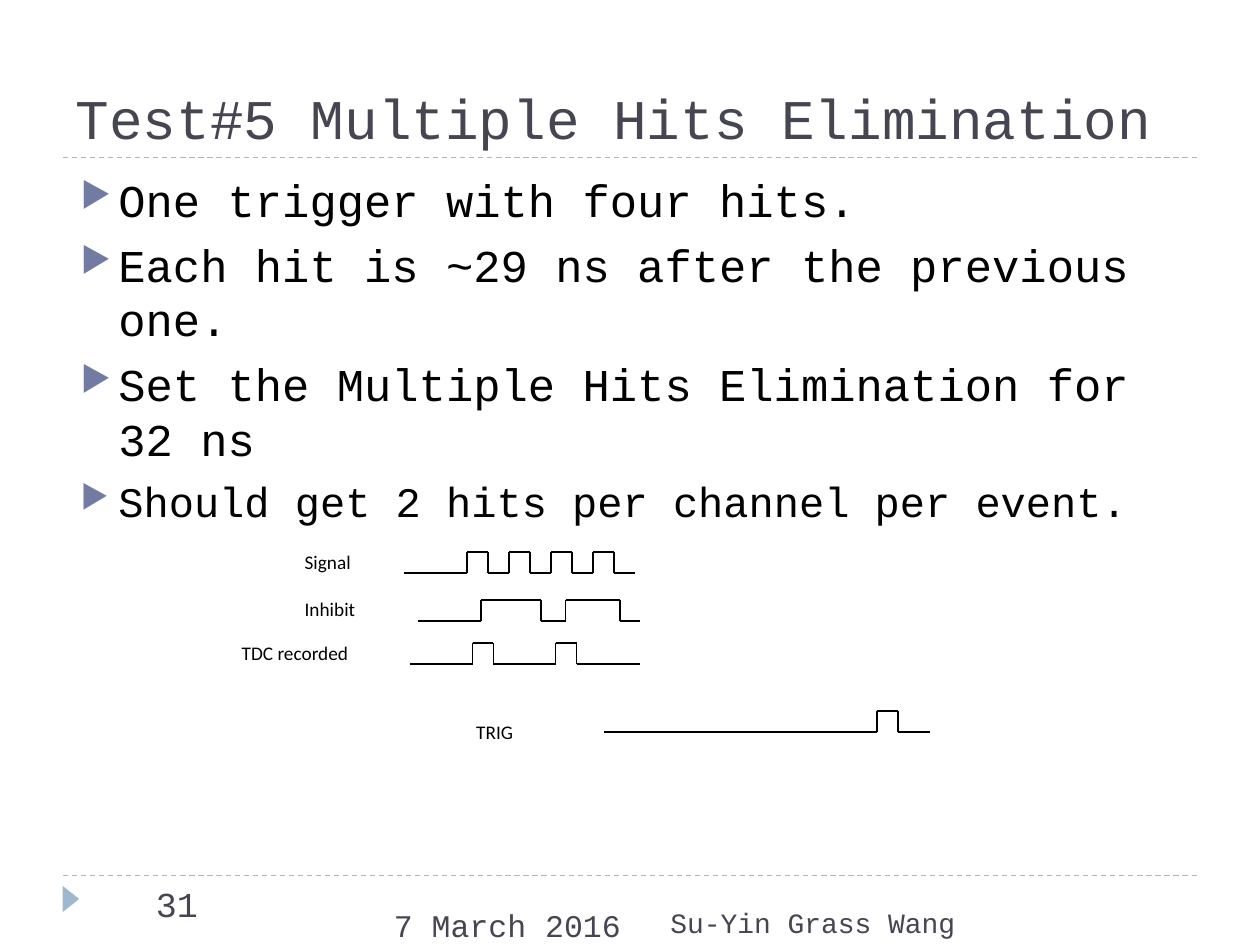
from dataclasses import dataclass

from lxml.etree import SubElement
from pptx import Presentation
from pptx.dml.color import RGBColor
from pptx.enum.dml import MSO_LINE
from pptx.enum.shapes import MSO_CONNECTOR, MSO_SHAPE
from pptx.enum.text import MSO_ANCHOR, MSO_AUTO_SIZE, PP_ALIGN
from pptx.oxml.ns import qn
from pptx.util import Pt

MONO, SANS = "Courier New", "Calibri"
INK, SLATE, SKY, BLUE = "000000", "464653", "9FB8CD", "727CA3"


@dataclass
class Wave:
    label: str
    box: tuple[float, float, float]  # label left, top, width
    start: float
    end: float
    base: float
    pulses: list[tuple[float, float]]  # rise, fall


@dataclass
class Note:
    text: str
    box: tuple[float, float, float, float]
    size: float
    align: PP_ALIGN = PP_ALIGN.LEFT


PULSE = 12
WAVES = [
    Wave("Signal", (167, 311, 47), 231, 363, 327.6,
         [(x, x + PULSE) for x in range(267, 363, 2 * PULSE)]),
    Wave("Inhibit", (167, 337.7, 48), 239, 366, 355,
         [(275, 309), (323.2, 354.5)]),
    Wave("TDC recorded", (131, 363, 87), 234, 366, 379.5,
         [(270, 270 + PULSE), (317.5, 317.5 + PULSE)]),
    Wave("TRIG", (265, 408, 40), 345, 531.5, 418.5,
         [(501, 501 + PULSE)]),
]
NOTES = [
    Note("7 March 2016", (218, 514, 153.5, 39.5), 18),
    Note("Su-Yin Grass Wang", (371.5, 514, 181.5, 26), 16, PP_ALIGN.RIGHT),
    Note("31", (82, 500.5, 57, 39.5), 20),
]
POINTS = [
    ("One trigger with four hits.", 26),
    ("Each hit is ~29 ns after the previous one.", 26),
    ("Set the Multiple Hits Elimination for 32 ns", 26),
    ("Should get 2 hits per channel per event.", 24),
]


def color(code: str) -> RGBColor:
    return RGBColor.from_string(code)


def add_run(para, text: str, size: float, face: str, code: str) -> None:
    run = para.add_run()
    run.text = text
    run.font.size = Pt(size)
    run.font.name = face
    run.font.color.rgb = color(code)


def add_box(slide, left: float, top: float, width: float, height: float):
    frame = slide.shapes.add_textbox(
        Pt(left), Pt(top), Pt(width), Pt(height)).text_frame
    frame.word_wrap = True
    return frame


def add_line(slide, x1: float, y1: float, x2: float, y2: float,
             code: str = INK, width: float = 1):
    line = slide.shapes.add_connector(
        MSO_CONNECTOR.STRAIGHT, Pt(x1), Pt(y1), Pt(x2), Pt(y2))
    line.line.color.rgb = color(code)
    line.line.width = Pt(width)
    SubElement(line._element.spPr, qn("a:effectLst"))
    return line


def add_bullet(para) -> None:
    props = para._p.get_or_add_pPr()
    props.set("marL", str(Pt(21.6)))
    props.set("indent", str(-Pt(21.6)))
    tint = SubElement(props, qn("a:buClr"))
    SubElement(tint, qn("a:srgbClr"), val=BLUE)
    SubElement(props, qn("a:buSzPct"), val="76000")
    SubElement(props, qn("a:buChar"), char="▶")


def draw_wave(slide, wave: Wave) -> None:
    low, high = wave.base, wave.base - PULSE
    last = wave.start
    for rise, fall in wave.pulses:
        add_line(slide, last, low, rise, low)
        add_line(slide, rise, low, rise, high)
        add_line(slide, rise, high, fall, high)
        add_line(slide, fall, low, fall, high)
        last = fall
    add_line(slide, last, low, wave.end, low)
    frame = add_box(slide, *wave.box, 21)
    frame.word_wrap = False
    frame.auto_size = MSO_AUTO_SIZE.SHAPE_TO_FIT_TEXT
    add_run(frame.paragraphs[0], wave.label, 11, SANS, INK)


def main() -> None:
    deck = Presentation()
    deck.slide_width, deck.slide_height = Pt(720), Pt(540)
    slide = deck.slides.add_slide(deck.slide_layouts[5])

    # Rules and corner mark
    for y in (500.4, 90):
        rule = add_line(slide, 36, y, 684, y, SKY, 0.75)
        rule.line.dash_style = MSO_LINE.DASH
    mark = slide.shapes.add_shape(
        MSO_SHAPE.ISOSCELES_TRIANGLE, Pt(33), Pt(509), Pt(15), Pt(9.4))
    mark.rotation = 90
    mark.shadow.inherit = False
    mark.fill.solid()
    mark.fill.fore_color.rgb = color(SKY)
    mark.line.fill.background()

    # Title
    title = slide.shapes.title
    title.left, title.top = Pt(36), Pt(12)
    title.width, title.height = Pt(648), Pt(78)
    frame = title.text_frame
    frame.vertical_anchor = MSO_ANCHOR.BOTTOM
    frame.auto_size = MSO_AUTO_SIZE.NONE
    para = frame.paragraphs[0]
    para.alignment = PP_ALIGN.LEFT
    add_run(para, "Test#5 Multiple Hits Elimination", 32, MONO, SLATE)

    # Bullet points
    frame = add_box(slide, 39, 94.5, 648, 164)
    for i, (text, size) in enumerate(POINTS):
        para = frame.add_paragraph() if i else frame.paragraphs[0]
        add_bullet(para)
        para.space_before = Pt(6 if i else 0)
        add_run(para, text, size, MONO, INK)

    # Footer
    for note in NOTES:
        para = add_box(slide, *note.box).paragraphs[0]
        para.alignment = note.align
        add_run(para, note.text, note.size, MONO, SLATE)

    # Timing diagram
    for wave in WAVES:
        draw_wave(slide, wave)

    deck.save("out.pptx")


if __name__ == "__main__":
    main()
